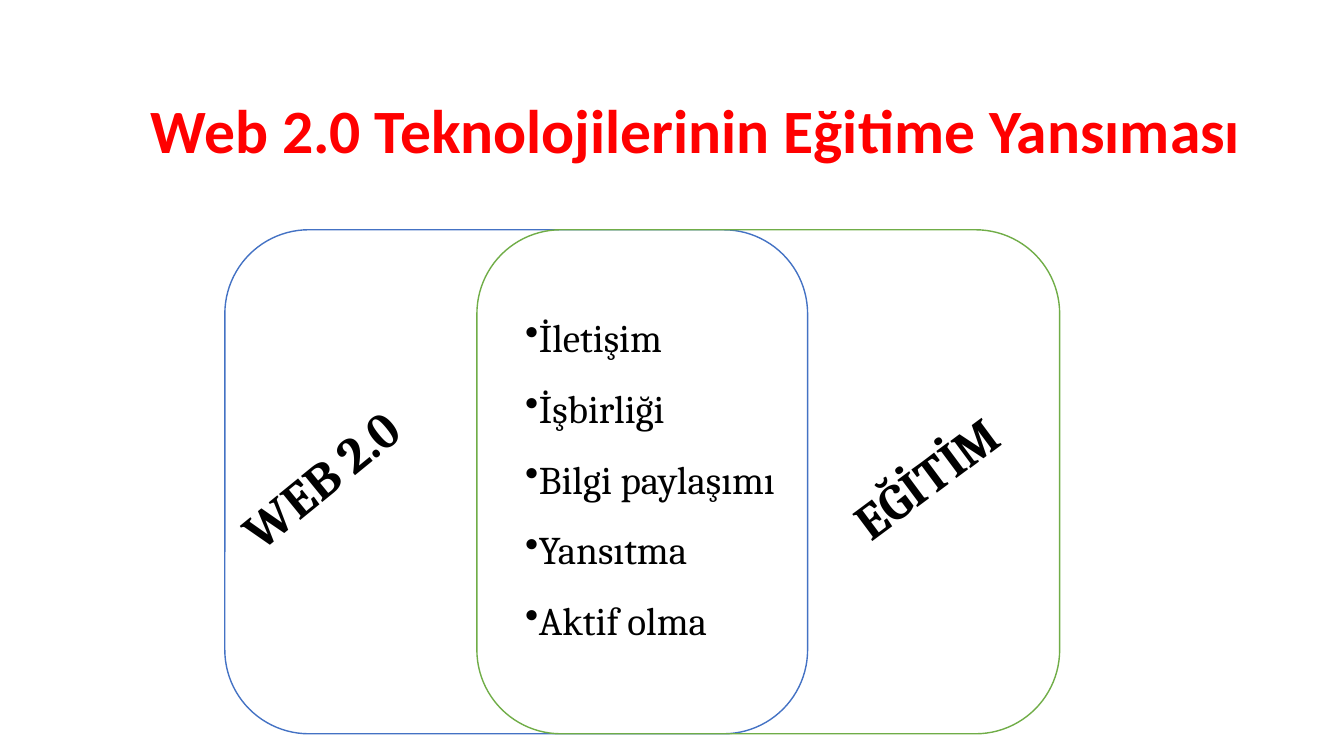
"""Build the slide on how Web 2.0 technologies are reflected in education."""
import pptx
import pptx.dml.color
import pptx.enum.shapes
import pptx.enum.text
import pptx.util
from lxml import etree

RED = pptx.dml.color.RGBColor(0xFF, 0x00, 0x00)
BLACK = pptx.dml.color.RGBColor(0x00, 0x00, 0x00)
BLUE = pptx.dml.color.RGBColor(0x44, 0x72, 0xC4)
GREEN = pptx.dml.color.RGBColor(0x70, 0xAD, 0x47)

TITLE = "Web 2.0 Teknolojilerinin Eğitime Yansıması"
SHARED = ["İletişim", "İşbirliği", "Bilgi paylaşımı", "Yansıtma", "Aktif olma"]
LABELS = [
    ("WEB 2.0", (212, 425, 248, 71), 320.8),
    ("EĞİTİM", (822, 425, 228, 71), 323.4),
]
SET_COLORS = [BLUE, GREEN]

PX = 9144
PAGE_SIZE = (1333, 750)
TITLE_BOX = (92, 60, 1150, 145)
SHARED_BOX = (511, 283, 290, 355)
SET_LEFT, SET_TOP, SET_WIDTH, SET_HEIGHT = 223, 228, 578, 500
SET_STEP = 250


def emu(lengths):
    return [length * PX for length in lengths]


def write(frame, text, size, font="Cambria", color=BLACK, bold=False,
          align=pptx.enum.text.PP_ALIGN.LEFT, spacing=1.0, bullet=None):
    """Fill a text frame with one paragraph for each line of text."""
    for index, line in enumerate(text.split("\n")):
        para = frame.add_paragraph() if index else frame.paragraphs[0]
        para.alignment = align
        para.line_spacing = spacing
        if bullet:
            properties = para._p.get_or_add_pPr()
            mark = etree.SubElement(properties, pptx.oxml.ns.qn("a:buChar"))
            mark.set("char", bullet)
        span = para.add_run()
        span.text = line
        span.font.name = font
        span.font.size = pptx.util.Pt(size)
        span.font.bold = bold
        span.font.color.rgb = color


def add_text(page, place, text, size, rotation=0, **style):
    box = page.shapes.add_textbox(*emu(place))
    box.rotation = rotation
    box.text_frame.word_wrap = False
    box.text_frame.auto_size = pptx.enum.text.MSO_AUTO_SIZE.SHAPE_TO_FIT_TEXT
    write(box.text_frame, text, size, **style)


def add_set(page, index, color):
    place = (SET_LEFT + index * SET_STEP, SET_TOP, SET_WIDTH, SET_HEIGHT)
    rounded = pptx.enum.shapes.MSO_SHAPE.ROUNDED_RECTANGLE
    shape = page.shapes.add_shape(rounded, *emu(place))
    shape.shadow.inherit = False
    shape.fill.background()
    shape.line.color.rgb = color
    shape.line.width = pptx.util.Pt(1)


def main():
    deck = pptx.Presentation()
    deck.slide_width, deck.slide_height = emu(PAGE_SIZE)
    page = deck.slides.add_slide(deck.slide_layouts[5])

    title = page.shapes.title
    title.left, title.top, title.width, title.height = emu(TITLE_BOX)
    title.text_frame.vertical_anchor = pptx.enum.text.MSO_ANCHOR.MIDDLE
    write(title.text_frame, TITLE, 44, font="Calibri", color=RED, bold=True,
          align=pptx.enum.text.PP_ALIGN.RIGHT, spacing=0.9)

    for index, color in enumerate(SET_COLORS):
        add_set(page, index, color)
    add_text(page, SHARED_BOX, "\n".join(SHARED), 28, spacing=1.5, bullet="•")
    for text, place, rotation in LABELS:
        add_text(page, place, text, 36, rotation=rotation, bold=True)

    deck.save("out.pptx")


if __name__ == "__main__":
    main()
